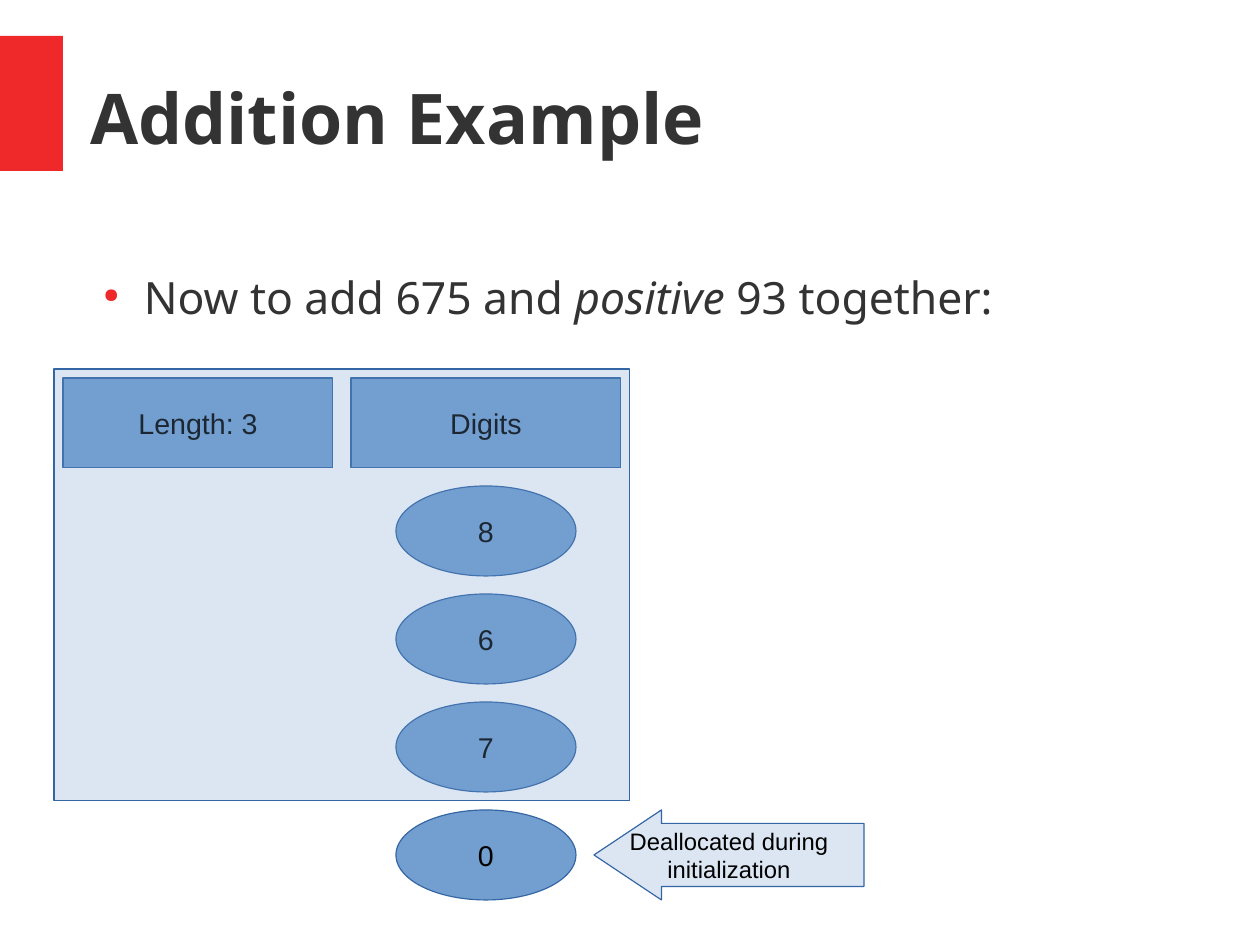
from lxml import etree
from pptx import Presentation
from pptx.dml.color import RGBColor
from pptx.enum import shapes, text
from pptx.oxml import ns
from pptx.util import Pt

TITLE = "Addition Example"
BULLET = [("Now to add 675 and ", False), ("positive", True), (" 93 together:", False)]
HEADERS = ["Length: 3", "Digits"]
DIGITS = ["8", "6", "7", "0"]
NOTE = "Deallocated during initialization"

RED = RGBColor(0xEF, 0x29, 0x29)
DARK = RGBColor(0x33, 0x33, 0x33)
BLACK = RGBColor(0, 0, 0)
BLUE = RGBColor(0x72, 0x9F, 0xCF)
EDGE = RGBColor(0x34, 0x65, 0xA4)

TITLE_FONT = {"name": "Noto Sans", "size": Pt(44), "bold": True}
BULLET_FONT = {"name": "Noto Sans", "size": Pt(28)}
LABEL_FONT = {"name": "Arial", "size": Pt(18)}
NOTE_FONT = {"name": "Arial", "size": Pt(15)}
NO_INSET = dict.fromkeys(("margin_left", "margin_top", "margin_right", "margin_bottom"), 0)

RECT, OVAL = shapes.MSO_SHAPE.RECTANGLE, shapes.MSO_SHAPE.OVAL
LEFT, TOP = 39.69, 238.11
HEADER_W, CELL_H, HEADER_STEP = 170.08, 56.7, 181.42
DIGIT_LEFT, DIGIT_TOP, DIGIT_W, DIGIT_STEP = 249.45, 306.14, 113.39, 68.03
BOX = (34.02, 232.44, 362.83, 272.13)
ARROW_LEFT, ARROW_NECK, ARROW_RIGHT = 374.17, 416.69, 544.25
ARROW_INSET = 8.5


def set_all(obj, values):
    for name, value in values.items():
        setattr(obj, name, value)


def add_run(p, words, font, color, italic=False):
    r = p.add_run()
    r.text = words
    set_all(r.font, {**font, "italic": italic})
    r.font.color.rgb = color


def style(sp, fill, line=None, alpha=None):
    sp.shadow.inherit = False
    sp.fill.solid()
    sp.fill.fore_color.rgb = fill
    if alpha:
        clr = sp._element.spPr.find(".//" + ns.qn("a:srgbClr"))
        etree.SubElement(clr, ns.qn("a:alpha"), val=str(alpha * 1000))
    if line is None:
        sp.line.fill.background()
    else:
        sp.line.color.rgb = line
        sp.line.width = Pt(0.75)


def add_box(s, kind, box, fill, line=None, alpha=None):
    sp = s.shapes.add_shape(kind, *map(Pt, box))
    style(sp, fill, line, alpha)
    return sp


def label(sp, words, font, wrap):
    tf = sp.text_frame
    set_all(tf, {"word_wrap": wrap, "vertical_anchor": text.MSO_ANCHOR.MIDDLE})
    p = tf.paragraphs[0]
    p.alignment = text.PP_ALIGN.CENTER
    add_run(p, words, font, BLACK)


def add_text(s, box, anchor):
    tf = s.shapes.add_textbox(*map(Pt, box)).text_frame
    set_all(tf, {**NO_INSET, "word_wrap": True, "vertical_anchor": anchor})
    return tf.paragraphs[0]


def add_bullet(p):
    pPr = p._p.get_or_add_pPr()
    pPr.set("marL", str(Pt(34)))
    pPr.set("indent", str(-Pt(25.5)))
    clr = etree.SubElement(pPr, ns.qn("a:buClr"))
    etree.SubElement(clr, ns.qn("a:srgbClr"), val=str(RED))
    etree.SubElement(pPr, ns.qn("a:buSzPct"), val="45000")
    etree.SubElement(pPr, ns.qn("a:buChar"), char="●")


def main():
    prs = Presentation()
    set_all(prs, {"slide_width": Pt(793.7), "slide_height": Pt(595.28)})
    s = prs.slides.add_slide(prs.slide_layouts[6])

    add_box(s, RECT, (0, 22.68, 39.69, 85.04), RED)
    p = add_text(s, (56.69, 23.7, 697, 99.4), text.MSO_ANCHOR.MIDDLE)
    add_run(p, TITLE, TITLE_FONT, DARK)
    p = add_text(s, (56.69, 170.08, 680.3, 39.69), text.MSO_ANCHOR.TOP)
    p.space_after = Pt(14.1)
    add_bullet(p)
    for words, italic in BULLET:
        add_run(p, words, BULLET_FONT, DARK, italic)

    cells = [(RECT, (LEFT + i * HEADER_STEP, TOP, HEADER_W, CELL_H), words)
             for i, words in enumerate(HEADERS)]
    cells += [(OVAL, (DIGIT_LEFT, DIGIT_TOP + i * DIGIT_STEP, DIGIT_W, CELL_H), words)
              for i, words in enumerate(DIGITS)]
    for kind, box, words in cells:
        label(add_box(s, kind, box, BLUE, EDGE), words, LABEL_FONT, False)

    add_box(s, RECT, BOX, BLUE, EDGE, 25)

    top = DIGIT_TOP + (len(DIGITS) - 1) * DIGIT_STEP
    bottom = top + CELL_H
    upper, lower = top + ARROW_INSET, bottom - ARROW_INSET
    outline = [(ARROW_RIGHT, upper), (ARROW_NECK, upper), (ARROW_NECK, top),
               (ARROW_LEFT, (top + bottom) / 2), (ARROW_NECK, bottom),
               (ARROW_NECK, lower), (ARROW_RIGHT, lower)]
    points = [(Pt(x), Pt(y)) for x, y in outline]
    fb = s.shapes.build_freeform(*points[0])
    fb.add_line_segments(points[1:], close=True)
    sp = fb.convert_to_shape()
    style(sp, BLUE, EDGE, 25)
    label(sp, NOTE, NOTE_FONT, True)

    prs.save("out.pptx")


if __name__ == "__main__":
    main()
